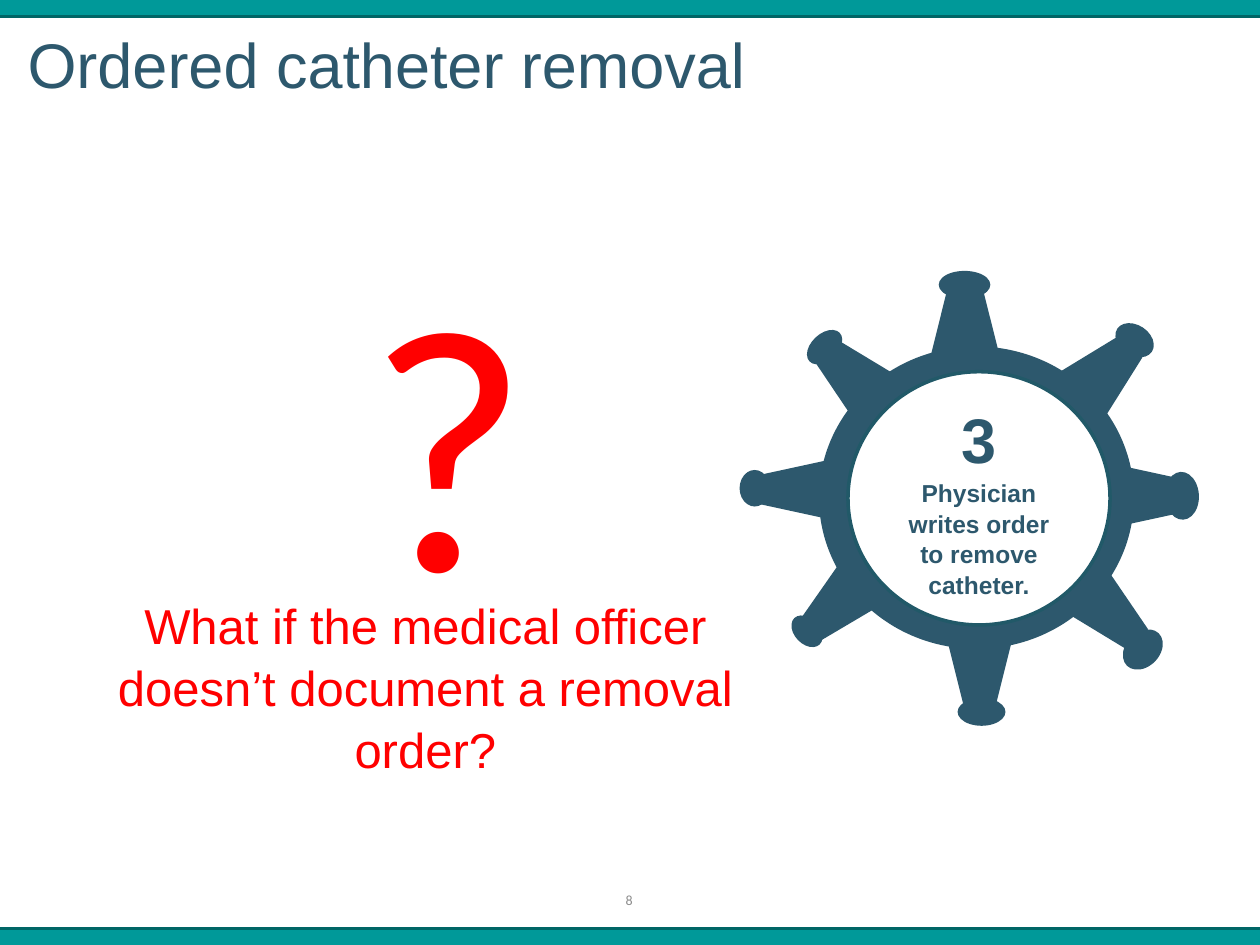
from dataclasses import dataclass

from lxml import etree
from pptx import Presentation
from pptx import util as u
from pptx.dml.color import RGBColor
from pptx.enum import shapes, text
from pptx.oxml import ns


@dataclass(frozen=True)
class Theme:
    """Colours, fonts and type sizes of the slide."""
    band: str = "009999"
    rule: str = "006666"
    gear: str = "2D586D"
    rim: str = "215968"
    hub: str = "FFFFFF"
    question: str = "FF0000"
    muted: str = "8C8C8C"
    body_font: str = "Arial"
    accent_font: str = "Calibri"
    title_size: float = 36
    question_size: float = 28
    label_size: float = 14
    mark_size: float = 199
    number_size: float = 8
    rule_width: float = 2
    line_spacing: float = 1.05


THEME = Theme()
OVAL = shapes.MSO_SHAPE.OVAL
TRAPEZOID = shapes.MSO_SHAPE.TRAPEZOID
CENTER = text.PP_ALIGN.CENTER

TEETH = [
    (7.39, 2.32, 0.54, 0.49, 0),
    (7.52, 5.09, 0.51, 0.49, 180),
    (8.97, 3.67, 0.46, 0.53, 90),
    (6.06, 3.62, 0.46, 0.53, 270),
    (8.54, 2.67, 0.5, 0.53, 45.4),
    (8.61, 4.63, 0.46, 0.53, 133.5),
    (6.39, 4.56, 0.46, 0.53, 227.2),
    (6.49, 2.68, 0.47, 0.53, 313.6),
]
TOOTH_CAPS = [
    (7.45, 2.15, 0.41, 0.22, 0),
    (8.89, 5.02, 0.36, 0.27, 134.2),
    (9.19, 3.8, 0.38, 0.27, 86.8),
    (8.84, 2.58, 0.33, 0.24, 33.8),
    (6.38, 2.65, 0.33, 0.21, 316.8),
    (5.87, 3.73, 0.24, 0.29, 0),
    (6.26, 4.91, 0.29, 0.2, 46.2),
    (7.6, 5.54, 0.38, 0.22, 0),
]


def add_filled(parent, kind, box, fill, rotation=0, line=None):
    """Add a flat preset shape with an optional outline."""
    shape = parent.add_shape(kind, *map(u.Inches, box))
    shape.shadow.inherit = False
    shape.rotation = rotation
    shape.fill.solid()
    shape.fill.fore_color.rgb = RGBColor.from_string(fill)
    if line:
        shape.line.color.rgb = RGBColor.from_string(line)
        shape.line.width = u.Pt(THEME.rule_width)
    else:
        shape.line.fill.background()
    return shape


def add_rule(slide, top):
    """Add a line across the slide."""
    connector = slide.shapes.add_connector(
        shapes.MSO_CONNECTOR.STRAIGHT,
        u.Inches(0), u.Inches(top), u.Inches(10), u.Inches(top))
    connector.line.color.rgb = RGBColor.from_string(THEME.rule)
    connector.line.width = u.Pt(THEME.rule_width)
    etree.SubElement(connector._element.spPr, ns.qn("a:effectLst"))


def write_text(shape, lines, color, font=THEME.body_font, align=CENTER, bold=False):
    """Fill a shape with one paragraph for each pair of wording and size."""
    frame = shape.text_frame
    frame.word_wrap = True
    frame.vertical_anchor = text.MSO_ANCHOR.MIDDLE
    for index, (wording, size) in enumerate(lines):
        paragraph = frame.add_paragraph() if index else frame.paragraphs[0]
        paragraph.alignment = align
        paragraph.line_spacing = THEME.line_spacing
        run = paragraph.add_run()
        run.text = wording
        run.font.name = font
        run.font.size = u.Pt(size)
        run.font.bold = bold
        run.font.color.rgb = RGBColor.from_string(color)


def add_text(slide, box, wording, size, color, **style):
    """Add a text box with a single paragraph."""
    shape = slide.shapes.add_textbox(*map(u.Inches, box))
    write_text(shape, [(wording, size)], color, **style)
    return shape


def add_bands(slide):
    """Add the top and bottom bands with their edge lines."""
    for band_top, rule_top in ((0, 0.13), (7.37, 7.37)):
        add_filled(slide.shapes, shapes.MSO_SHAPE.RECTANGLE,
                   (0, band_top, 10, 0.13), THEME.band)
        add_rule(slide, rule_top)


def add_gear(slide):
    """Add the gear wheel and its labelled hub."""
    wheel = slide.shapes.add_group_shape().shapes
    add_filled(wheel, OVAL, (6.5, 2.75, 2.5, 2.4), THEME.gear)
    for kind, parts in ((TRAPEZOID, TEETH), (OVAL, TOOTH_CAPS)):
        for *box, rotation in parts:
            add_filled(wheel, kind, box, THEME.gear, rotation)
    hub = add_filled(slide.shapes, OVAL, (6.73, 2.95, 2.08, 2.01),
                     THEME.hub, line=THEME.rim)
    write_text(hub, [("3", THEME.title_size),
                     ("Physician writes order to remove catheter.", THEME.label_size)],
               THEME.gear, bold=True)


def main():
    """Build and save the slide."""
    presentation = Presentation()
    presentation.slide_width = u.Inches(10)
    presentation.slide_height = u.Inches(7.5)
    slide = presentation.slides.add_slide(presentation.slide_layouts[6])
    add_bands(slide)
    add_gear(slide)
    add_text(slide, (3.83, 6.94, 2.33, 0.4), "8", THEME.number_size,
             THEME.muted, font=THEME.accent_font)
    add_text(slide, (0.67, 4.48, 5.41, 1.92),
             "What if the medical officer doesn’t document a removal order?",
             THEME.question_size, THEME.question)
    mark = add_text(slide, (2.82, 3, 1.1, 0.6), "?", THEME.mark_size,
                    THEME.question, font=THEME.accent_font)
    mark.text_frame.margin_top = u.Inches(0.15)
    add_text(slide, (0.12, 0.05, 9.42, 0.87), "Ordered catheter removal",
             THEME.title_size, THEME.gear, align=text.PP_ALIGN.LEFT)
    presentation.save("out.pptx")


if __name__ == "__main__":
    main()
